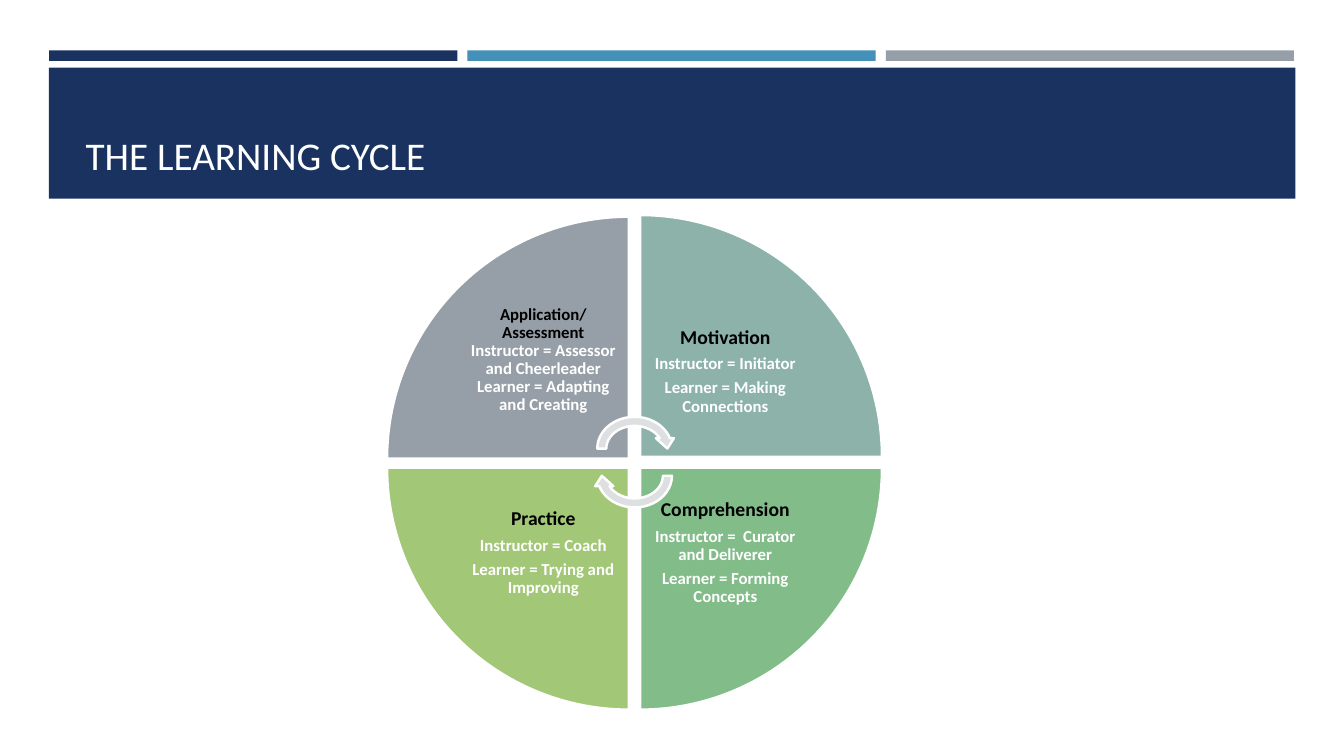
"""Build the Learning Cycle slide: a banner title above four pie wedges and two arrows."""

from dataclasses import dataclass

from pptx import Presentation
from pptx.dml.color import RGBColor
from pptx.enum.shapes import MSO_SHAPE
from pptx.enum.text import MSO_ANCHOR, MSO_AUTO_SIZE, PP_ALIGN
from pptx.shapes.autoshape import Shape
from pptx.slide import Slide
from pptx.util import Pt


@dataclass(frozen=True)
class Theme:
    font: str = "Calibri"
    navy: str = "1A3260"
    blue: str = "4590B8"
    gray: str = "969FA7"
    teal: str = "8CB2AA"
    green: str = "81BC89"
    lime: str = "A2C777"
    arrow: str = "DDDFE1"
    white: str = "FFFFFF"
    black: str = "000000"
    title_size: float = 28
    heading_size: float = 14
    body_size: float = 12
    outline: float = 1.75


@dataclass(frozen=True)
class Box:
    left: float
    top: float
    width: float
    height: float


@dataclass(frozen=True)
class Line:
    text: str
    size: float
    color: str


@dataclass(frozen=True)
class Stage:
    color: str
    wedge: Box
    label: Box
    inset: float
    paragraphs: tuple[tuple[Line, ...], ...]


THEME = Theme()
WEDGE = 172.8
LABEL = 121.8
LEFT, RIGHT = 276.5, 457.2
LABEL_LEFT = 327.2
UPPER, LOWER = 153.6, 334.1


def heading(text: str, size: float = THEME.heading_size) -> Line:
    return Line(text, size, THEME.black)


def body(text: str) -> Line:
    return Line(text, THEME.body_size, THEME.white)


STAGES = (
    Stage(THEME.gray, Box(LEFT, 154.8, WEDGE, WEDGE), Box(LABEL_LEFT, 205.2, LABEL, 104), 6.5, ((
        heading("Application/", THEME.body_size),
        heading("Assessment", THEME.body_size),
        body("Instructor = Assessor and Cheerleader"),
        body("Learner = Adapting and Creating"),
    ),)),
    Stage(THEME.teal, Box(RIGHT, UPPER, WEDGE, WEDGE), Box(RIGHT, 204.4, LABEL, LABEL), 8, (
        (heading("Motivation"),),
        (body("Instructor = Initiator"),),
        (body("Learner = Making Connections"),),
    )),
    Stage(THEME.green, Box(RIGHT, LOWER, WEDGE, WEDGE), Box(RIGHT, LOWER, LABEL, LABEL), 8, (
        (heading("Comprehension"),),
        (body("Instructor =  Curator and Deliverer"),),
        (body("Learner = Forming Concepts"),),
    )),
    Stage(THEME.lime, Box(LEFT, LOWER, WEDGE, WEDGE), Box(LABEL_LEFT, LOWER, LABEL, LABEL), 8, (
        (heading("Practice"),),
        (body("Instructor = Coach"),),
        (body("Learner = Trying and Improving"),),
    )),
)


def place(box: Box) -> tuple[Pt, Pt, Pt, Pt]:
    return Pt(box.left), Pt(box.top), Pt(box.width), Pt(box.height)


def add_filled(slide: Slide, kind: MSO_SHAPE, box: Box, color: str,
               rotation: float = 0, outlined: bool = True) -> Shape:
    shape = slide.shapes.add_shape(kind, *place(box))
    shape.shadow.inherit = False
    shape.rotation = rotation
    shape.fill.solid()
    shape.fill.fore_color.rgb = RGBColor.from_string(color)
    if outlined:
        shape.line.color.rgb = RGBColor.from_string(THEME.white)
        shape.line.width = Pt(THEME.outline)
    else:
        shape.line.fill.background()
    return shape


def add_run(paragraph, line: Line, bold: bool) -> None:
    run = paragraph.add_run()
    run.text = line.text
    run.font.name = THEME.font
    run.font.size = Pt(line.size)
    run.font.bold = bold
    run.font.color.rgb = RGBColor.from_string(line.color)


def add_banner(slide: Slide) -> None:
    title = slide.shapes.title
    strips = [
        (Box(35.1 + index * 298.8, 36, 291.6, 7.5), color)
        for index, color in enumerate((THEME.navy, THEME.blue, THEME.gray))
    ]
    for box, color in [*strips, (Box(34.9, 48.4, 890.4, 93.6), THEME.navy)]:
        bar = add_filled(slide, MSO_SHAPE.RECTANGLE, box, color, outlined=False)
        title.element.addprevious(bar.element)

    title.left, title.top, title.width, title.height = place(Box(54, 48.2, 797.8, 82.8))
    frame = title.text_frame
    frame.auto_size = MSO_AUTO_SIZE.NONE
    frame.vertical_anchor = MSO_ANCHOR.BOTTOM
    paragraph = frame.paragraphs[0]
    paragraph.alignment = PP_ALIGN.LEFT
    add_run(paragraph, Line("THE LEARNING CYCLE", THEME.title_size, THEME.white), False)


def add_label(slide: Slide, stage: Stage) -> None:
    frame = slide.shapes.add_textbox(*place(stage.label)).text_frame
    frame.word_wrap = True
    frame.vertical_anchor = MSO_ANCHOR.MIDDLE
    frame.margin_left = frame.margin_right = Pt(stage.inset)
    frame.margin_top = frame.margin_bottom = Pt(stage.inset)
    for index, lines in enumerate(stage.paragraphs):
        paragraph = frame.add_paragraph() if index else frame.paragraphs[0]
        paragraph.alignment = PP_ALIGN.CENTER
        paragraph.line_spacing = 0.9
        paragraph.space_after = Pt(0.35 * lines[0].size)
        for position, line in enumerate(lines):
            if position:
                paragraph.add_line_break()
            add_run(paragraph, line, True)


def add_cycle(slide: Slide) -> None:
    for index, stage in enumerate(STAGES):
        add_filled(slide, MSO_SHAPE.PIE_WEDGE, stage.wedge, stage.color, 90 * index)
        add_label(slide, stage)
    for top, rotation in ((294.5, 0), (313.9, 180)):
        add_filled(slide, MSO_SHAPE.CIRCULAR_ARROW, Box(423.4, top, 59.8, 51.8),
                   THEME.arrow, rotation)


def main() -> None:
    presentation = Presentation()
    presentation.slide_width, presentation.slide_height = Pt(960), Pt(540)
    slide = presentation.slides.add_slide(presentation.slide_layouts.get_by_name("Title Only"))
    add_banner(slide)
    add_cycle(slide)
    presentation.save("out.pptx")


if __name__ == "__main__":
    main()
